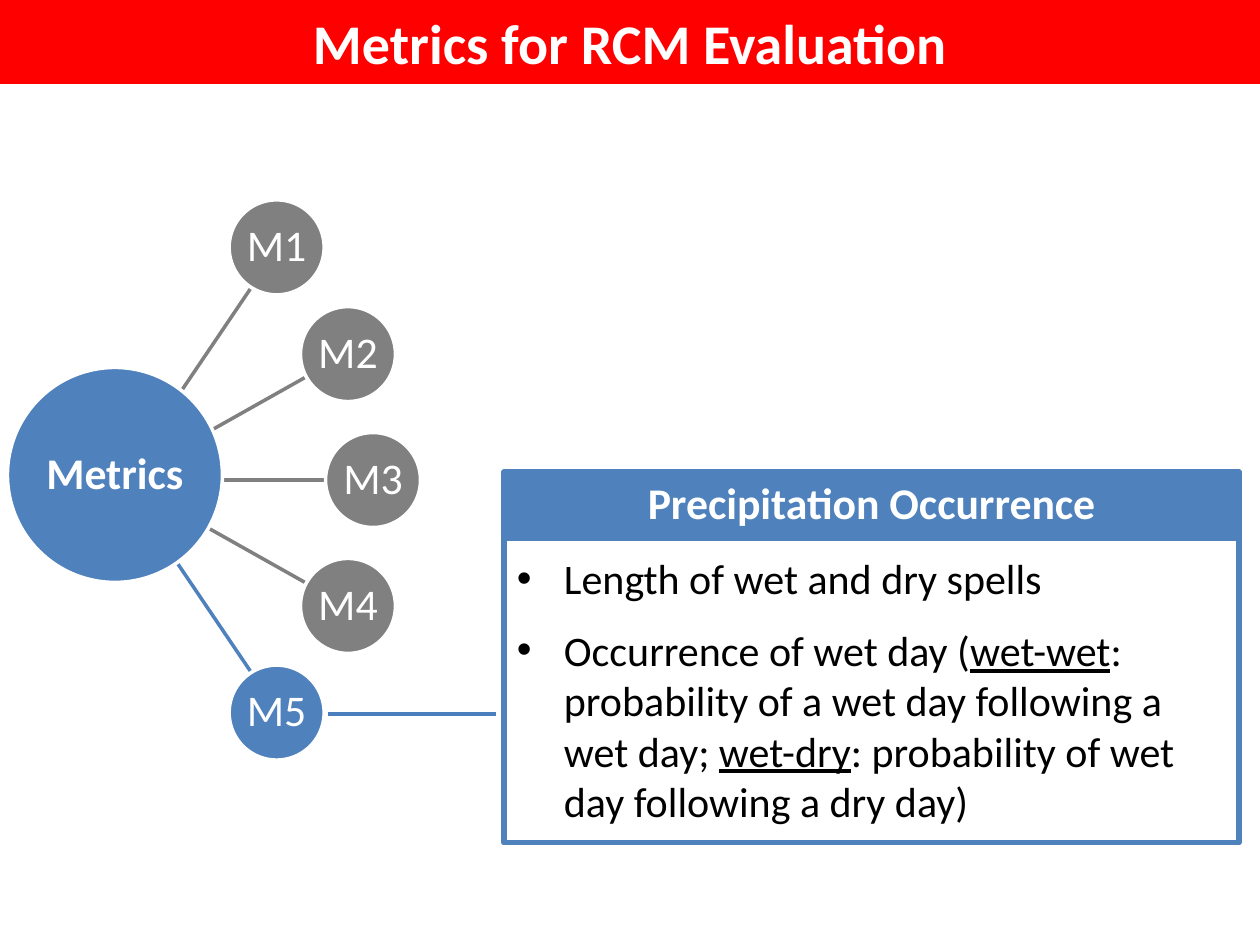
from dataclasses import dataclass
from math import cos, radians, sin

from lxml import etree
from pptx import Presentation
from pptx.dml.color import RGBColor
from pptx.enum.shapes import MSO_CONNECTOR, MSO_SHAPE
from pptx.enum.text import MSO_ANCHOR, MSO_AUTO_SIZE, PP_ALIGN
from pptx.oxml.ns import qn
from pptx.util import Emu, Pt

RECT, OVAL = MSO_SHAPE.RECTANGLE, MSO_SHAPE.OVAL
STRAIGHT = MSO_CONNECTOR.STRAIGHT
TOP, MIDDLE = MSO_ANCHOR.TOP, MSO_ANCHOR.MIDDLE
LEFT, CENTER = PP_ALIGN.LEFT, PP_ALIGN.CENTER
SCALE = 914400 / 126


def px(n):
    return Emu(round(n * SCALE))


@dataclass(frozen=True)
class Theme:
    font: str = "Calibri"
    red: str = "FF0000"
    blue: str = "4F81BD"
    link: str = "4B7EBC"
    gray: str = "808080"
    white: str = "FFFFFF"
    black: str = "000000"
    title: int = 32
    label: int = 25
    body: int = 24


class Deck:
    def __init__(self, theme):
        self.theme = theme
        self.prs = Presentation()
        self.prs.slide_width, self.prs.slide_height = px(1260), px(945)
        self.slide = self.prs.slides.add_slide(self.prs.slide_layouts[5])

    def run(self, para, text, size, color, bold=False, under=False):
        run = para.add_run()
        run.text = text
        font = run.font
        font.name, font.size = self.theme.font, Pt(size)
        font.bold, font.underline = bold, under
        font.color.rgb = RGBColor.from_string(color)

    def frame(self, shape, side, end, anchor):
        """Set equal side insets, equal end insets and the anchor."""
        frame = shape.text_frame
        frame.word_wrap = True
        frame.auto_size = MSO_AUTO_SIZE.NONE
        frame.margin_left = frame.margin_right = px(side)
        frame.margin_top = frame.margin_bottom = px(end)
        frame.vertical_anchor = anchor
        return frame

    def title(self, text, high):
        shape = self.slide.shapes.title
        shape.left, shape.top = px(0), px(0)
        shape.width, shape.height = px(1260), px(high)
        shape.fill.solid()
        shape.fill.fore_color.rgb = RGBColor.from_string(self.theme.red)
        para = self.frame(shape, 13, 6, MIDDLE).paragraphs[0]
        para.alignment = CENTER
        self.run(para, text, self.theme.title, self.theme.white, bold=True)

    def shape(self, kind, box, fill, line, width):
        shape = self.slide.shapes.add_shape(kind, *map(px, box))
        shape.shadow.inherit = False
        if fill:
            shape.fill.solid()
            shape.fill.fore_color.rgb = RGBColor.from_string(fill)
        else:
            shape.fill.background()
        shape.line.color.rgb = RGBColor.from_string(line)
        shape.line.width = Pt(width)
        return shape

    def label(self, shape, text, bold=False):
        para = self.frame(shape, 0, 0, MIDDLE).paragraphs[0]
        para.alignment = CENTER
        para.line_spacing = 0.9
        self.run(para, text, self.theme.label, self.theme.white, bold)

    def disc(self, x, y, size, fill, text, bold=False):
        """Draw a labelled circle centred on x, y."""
        box = (x - size / 2, y - size / 2, size, size)
        shape = self.shape(OVAL, box, fill, self.theme.white, 2)
        self.label(shape, text, bold)

    def line(self, x1, y1, x2, y2, color):
        line = self.slide.shapes.add_connector(STRAIGHT, *map(px, (x1, y1, x2, y2)))
        line.line.color.rgb = RGBColor.from_string(color)
        line.line.width = Pt(2)
        etree.SubElement(line._element.spPr, qn("a:effectLst"))

    def bullets(self, shape, items):
        """Fill a shape with items, each a list of (text, underlined)."""
        frame = self.frame(shape, 13, 15, TOP)
        for i, item in enumerate(items):
            para = frame.add_paragraph() if i else frame.paragraphs[0]
            para.alignment = LEFT
            props = para._p.get_or_add_pPr()
            props.set("marL", str(px(47)))
            props.set("indent", str(-px(47)))
            etree.SubElement(props, qn("a:buFont"), typeface="Arial")
            etree.SubElement(props, qn("a:buChar"), char="•")
            if i:
                para.space_before = Pt(12)
            for text, under in item:
                self.run(para, text, self.theme.body, self.theme.black, under=under)


def main():
    theme = Theme()
    deck = Deck(theme)
    deck.title("Metrics for RCM Evaluation", 84)

    # Nodes sit on an arc; spokes mirror about its middle row.
    mid = 480
    spokes = {0: (178, 0, 325, 0), 1: (178, 31, 306, 103), 2: (159, 56, 251, 192)}
    nodes = [(f"M{i + 3}", i, theme.blue if i == 2 else theme.gray)
             for i in range(-2, 3)]
    for name, step, color in nodes:
        x1, y1, x2, y2 = spokes[abs(step)]
        sign = -1 if step < 0 else 1
        deck.line(x1, mid + sign * y1, x2, mid + sign * y2, color)
    deck.disc(115, 475, 215, theme.blue, "Metrics", bold=True)
    for name, step, color in nodes:
        turn = radians(22.5 * step)
        deck.disc(44 + 329 * cos(turn), mid + 329 * sin(turn), 95, color, name)

    left, wide, top, split, base = 504, 735, 472, 538, 843
    head = deck.shape(RECT, (left, top, wide, split - top), theme.blue, theme.blue, 3)
    deck.label(head, "Precipitation Occurrence", bold=True)
    body = deck.shape(RECT, (left, split, wide, base - split), None, theme.blue, 3)
    deck.bullets(body, [
        [("Length of wet and dry spells", False)],
        [("Occurrence of wet day (", False), ("wet-wet", True),
         (": probability of a wet day following a wet day; ", False),
         ("wet-dry", True),
         (": probability of wet day following a dry day)", False)],
    ])
    deck.line(328, 714, 496, 714, theme.link)
    deck.prs.save("out.pptx")


if __name__ == "__main__":
    main()
